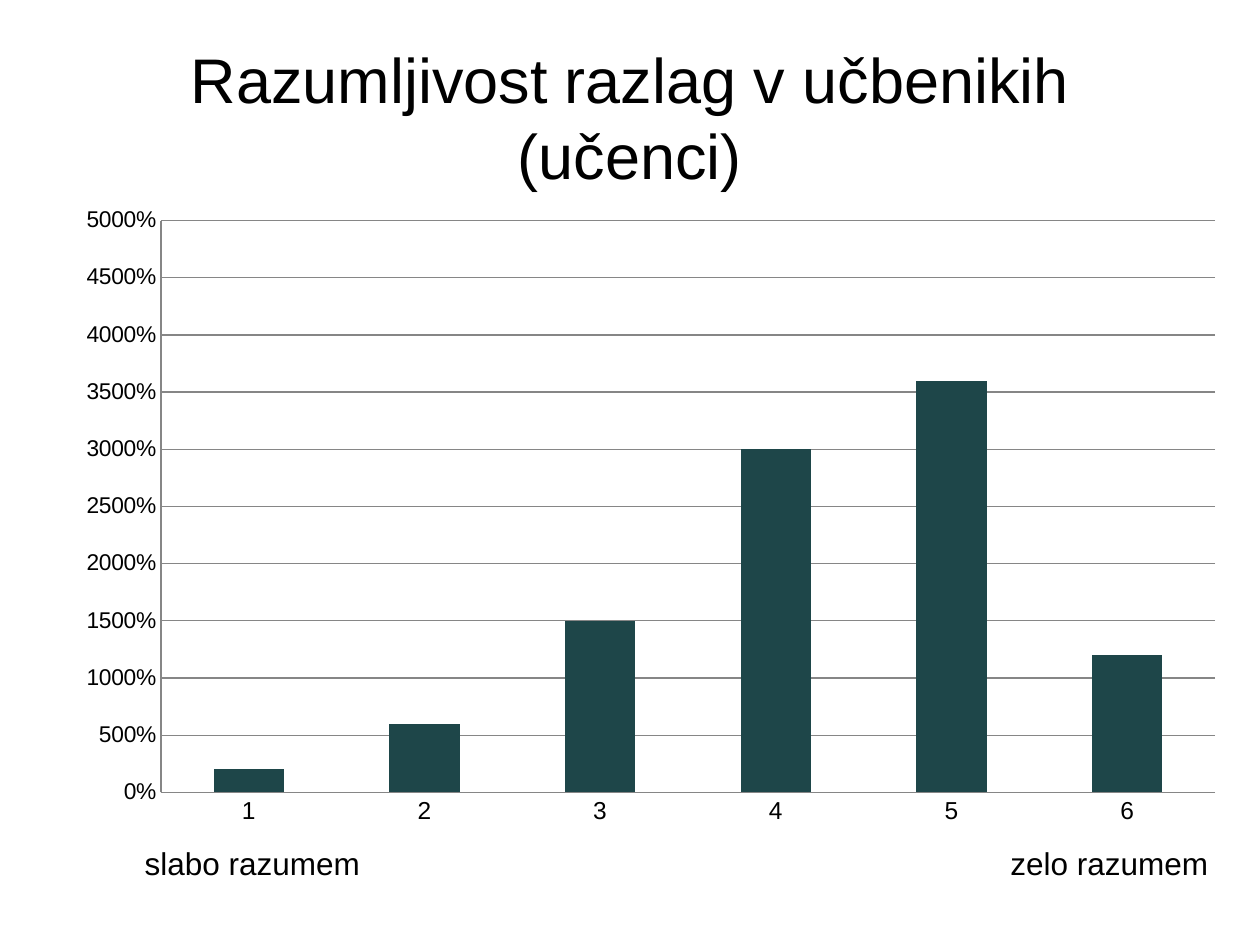
from pptx import Presentation
from pptx.chart.data import CategoryChartData
from pptx.dml.color import RGBColor
from pptx.enum import chart as ch, shapes, text
from pptx.util import Inches, Pt

BLACK = RGBColor(0x00, 0x00, 0x00)
WHITE = RGBColor(0xFF, 0xFF, 0xFF)
TEAL = RGBColor(0x1E, 0x46, 0x49)
GRAY = RGBColor(0x86, 0x86, 0x86)
FONT = "Arial"


def add_text(sp, words, size, align, anchor):
    tf = sp.text_frame
    tf.word_wrap = True
    tf.vertical_anchor = anchor
    p = tf.paragraphs[0]
    p.alignment = align
    r = p.add_run()
    r.text = words
    r.font.name = FONT
    r.font.size = Pt(size)
    r.font.color.rgb = BLACK


prs = Presentation()
prs.slide_width = Inches(10)
prs.slide_height = Inches(7.5)
s = prs.slides.add_slide(prs.slide_layouts[6])

data = CategoryChartData(number_format="0%")
data.categories = ["1", "2", "3", "4", "5", "6"]
data.add_series("Series 1", (2, 6, 15, 30, 36, 12))
chart = s.shapes.add_chart(
    ch.XL_CHART_TYPE.COLUMN_CLUSTERED,
    Inches(0.5), Inches(1.55), Inches(9.33), Inches(5.1), data,
).chart
chart.has_legend = False
chart.has_title = False
chart.font.name = FONT
chart.font.size = Pt(10)
chart.font.color.rgb = BLACK

plot = chart.plots[0]
plot.vary_by_categories = False
plot.gap_width = 150
fill = plot.series[0].format.fill
fill.solid()
fill.fore_color.rgb = TEAL

for axis, size in ((chart.category_axis, 14), (chart.value_axis, 13)):
    axis.major_tick_mark = ch.XL_TICK_MARK.NONE
    axis.minor_tick_mark = ch.XL_TICK_MARK.NONE
    axis.format.line.color.rgb = GRAY
    font = axis.tick_labels.font
    font.name = FONT
    font.size = Pt(size)
    font.color.rgb = BLACK

axis = chart.value_axis
axis.minimum_scale = 0
axis.maximum_scale = 50
axis.major_unit = 5
axis.has_major_gridlines = True
axis.major_gridlines.format.line.color.rgb = GRAY
axis.tick_labels.number_format = "0%"
axis.tick_labels.number_format_is_linked = False

title = s.shapes.add_textbox(Inches(0.5), Inches(0.3), Inches(9), Inches(1.25))
add_text(title, "Razumljivost razlag v učbenikih (učenci)", 36,
         text.PP_ALIGN.CENTER, text.MSO_ANCHOR.MIDDLE)

for words, left, width, outlined in (
    ("slabo razumem", 1.05, 2.08, True),
    ("zelo razumem", 7.92, 1.91, False),
):
    sp = s.shapes.add_shape(shapes.MSO_SHAPE.RECTANGLE, Inches(left),
                            Inches(6.65), Inches(width), Inches(0.4))
    sp.shadow.inherit = False
    sp.fill.solid()
    sp.fill.fore_color.rgb = WHITE
    if outlined:
        sp.line.color.rgb = WHITE
        sp.line.width = Pt(2)
    else:
        sp.line.fill.background()
    add_text(sp, words, 18, text.PP_ALIGN.LEFT, text.MSO_ANCHOR.TOP)
    sp.text_frame.auto_size = text.MSO_AUTO_SIZE.SHAPE_TO_FIT_TEXT

prs.save("out.pptx")
